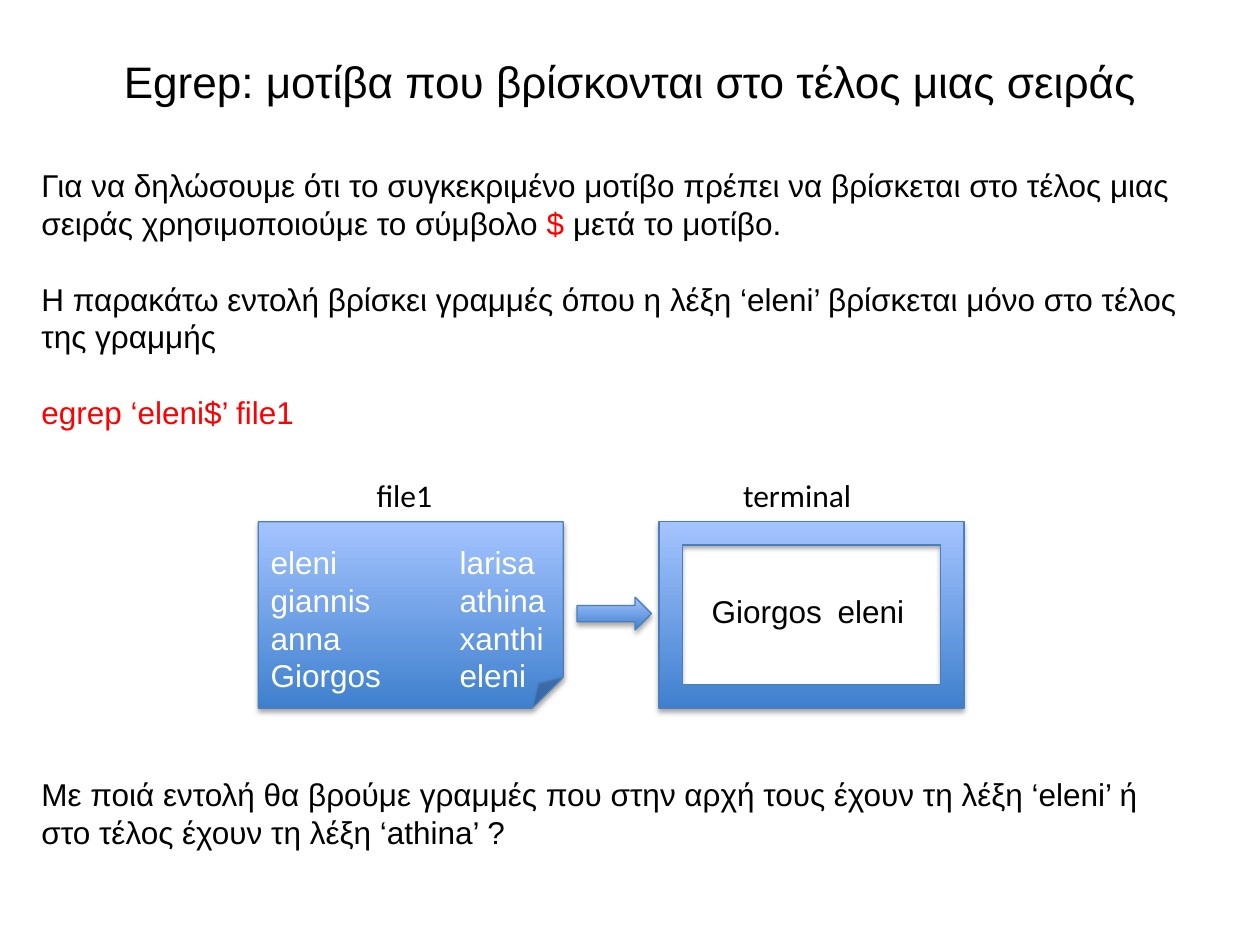
"""Build the slide on egrep patterns at the end of a line."""
from lxml.etree import SubElement
from pptx import Presentation
from pptx.dml.color import RGBColor
from pptx.enum.shapes import MSO_SHAPE
from pptx.enum.text import MSO_ANCHOR, PP_ALIGN
from pptx.oxml.ns import qn
from pptx.util import Inches, Pt

BLACK = RGBColor(0, 0, 0)
RED = RGBColor(255, 0, 0)
WHITE = RGBColor(255, 255, 255)
DEEP_BLUE = RGBColor(0x3F, 0x80, 0xCE)
PALE_BLUE = RGBColor(0xA4, 0xC4, 0xFF)
OUTLINE = RGBColor(0x4B, 0x7E, 0xBC)

TITLE = "Egrep: μοτίβα που βρίσκονται στο τέλος μιας σειράς"
EXPLANATION = [
    [("Για να δηλώσουμε ότι το συγκεκριμένο μοτίβο πρέπει να βρίσκεται στο τέλος μιας "
      "σειράς χρησιμοποιούμε το σύμβολο ", BLACK), ("$ ", RED), ("μετά το μοτίβο.", BLACK)],
    [("Η παρακάτω εντολή βρίσκει γραμμές όπου η λέξη ‘eleni’ βρίσκεται μόνο "
      "στο τέλος της γραμμής", BLACK)],
    [("egrep ‘eleni$’ file1", RED)],
]
QUESTION = ("Με ποιά εντολή θα βρούμε γραμμές που στην αρχή τους έχουν τη λέξη ‘eleni’ ή "
            "στο τέλος έχουν τη λέξη ‘athina’ ?")
FILE_ROWS = [("eleni", "larisa"), ("giannis", "athina"), ("anna", "xanthi"), ("Giorgos", "eleni")]
MATCH = ("Giorgos", "eleni")
LABELS = [("file1", 2.89, 0.65), ("terminal", 5.8, 1.07)]
PANEL_TOP, PANEL_WIDTH, PANEL_HEIGHT = 4.14, 2.42, 1.48


def plain(lines, color=BLACK):
    return [[(line, color)] for line in lines]


def write(frame, paragraphs, size=18, font="Arial", gap=0, tab=None, align=PP_ALIGN.LEFT):
    for index, pieces in enumerate(paragraphs):
        paragraph = frame.add_paragraph() if index else frame.paragraphs[0]
        paragraph.alignment = align
        if index and gap:
            paragraph.space_before = Pt(gap)
        if tab:
            stops = SubElement(paragraph._p.get_or_add_pPr(), qn("a:tabLst"))
            SubElement(stops, qn("a:tab"), pos=str(Inches(tab)), algn="l")
        for text, color in pieces:
            run = paragraph.add_run()
            run.text = text
            run.font.size, run.font.name = Pt(size), font
            run.font.color.rgb = color


def add_text(slide, box, paragraphs, wrap=True, anchor=MSO_ANCHOR.TOP, **style):
    frame = slide.shapes.add_textbox(*map(Inches, box)).text_frame
    frame.word_wrap, frame.vertical_anchor = wrap, anchor
    write(frame, paragraphs, **style)


def add_panel(slide, preset, box):
    panel = slide.shapes.add_shape(preset, *map(Inches, box))
    panel.fill.gradient()
    panel.fill.gradient_angle = 90
    for stop, color in zip(panel.fill.gradient_stops, (DEEP_BLUE, PALE_BLUE)):
        stop.color.rgb = color
    panel.line.color.rgb, panel.line.width = OUTLINE, Pt(0.75)
    panel.shadow.inherit = False
    effects = panel._element.spPr.find(qn("a:effectLst"))
    shadow = SubElement(effects, qn("a:outerShdw"), blurRad=str(Pt(3.1)), dist=str(Pt(1.8)),
                        dir="5400000", rotWithShape="0")
    shade = SubElement(shadow, qn("a:srgbClr"), val="000000")
    SubElement(shade, qn("a:alpha"), val="35000")
    return panel


def main():
    deck = Presentation()
    deck.slide_width, deck.slide_height = Inches(10), Inches(7.5)
    slide = deck.slides.add_slide(deck.slide_layouts[6])

    add_text(slide, (0.5, 0.3, 9, 0.68), plain([TITLE]), anchor=MSO_ANCHOR.MIDDLE,
             size=25.2, align=PP_ALIGN.CENTER)
    add_text(slide, (0.23, 1.27, 9.49, 2.22), EXPLANATION, gap=21.6)

    listing = add_panel(slide, MSO_SHAPE.FOLDED_CORNER,
                        (2.05, PANEL_TOP, PANEL_WIDTH, PANEL_HEIGHT)).text_frame
    listing.vertical_anchor = MSO_ANCHOR.TOP
    listing.margin_top, listing.margin_bottom = Inches(0.17), 0
    write(listing, plain(map("\t".join, FILE_ROWS), WHITE), tab=1.5)

    add_panel(slide, MSO_SHAPE.RIGHT_ARROW, (4.58, 4.74, 0.59, 0.26))
    add_panel(slide, MSO_SHAPE.FRAME, (5.23, PANEL_TOP, PANEL_WIDTH, PANEL_HEIGHT))
    add_text(slide, (5.55, 4.65, 1.83, 0.4), plain(["\t".join(MATCH)]), tab=1)
    for label, left, width in LABELS:
        add_text(slide, (left, 3.73, width, 0.4), plain([label]), wrap=False, font="Calibri")

    add_text(slide, (0.23, 6.1, 9.08, 1.01), plain([QUESTION]))
    deck.save("out.pptx")


if __name__ == "__main__":
    main()
